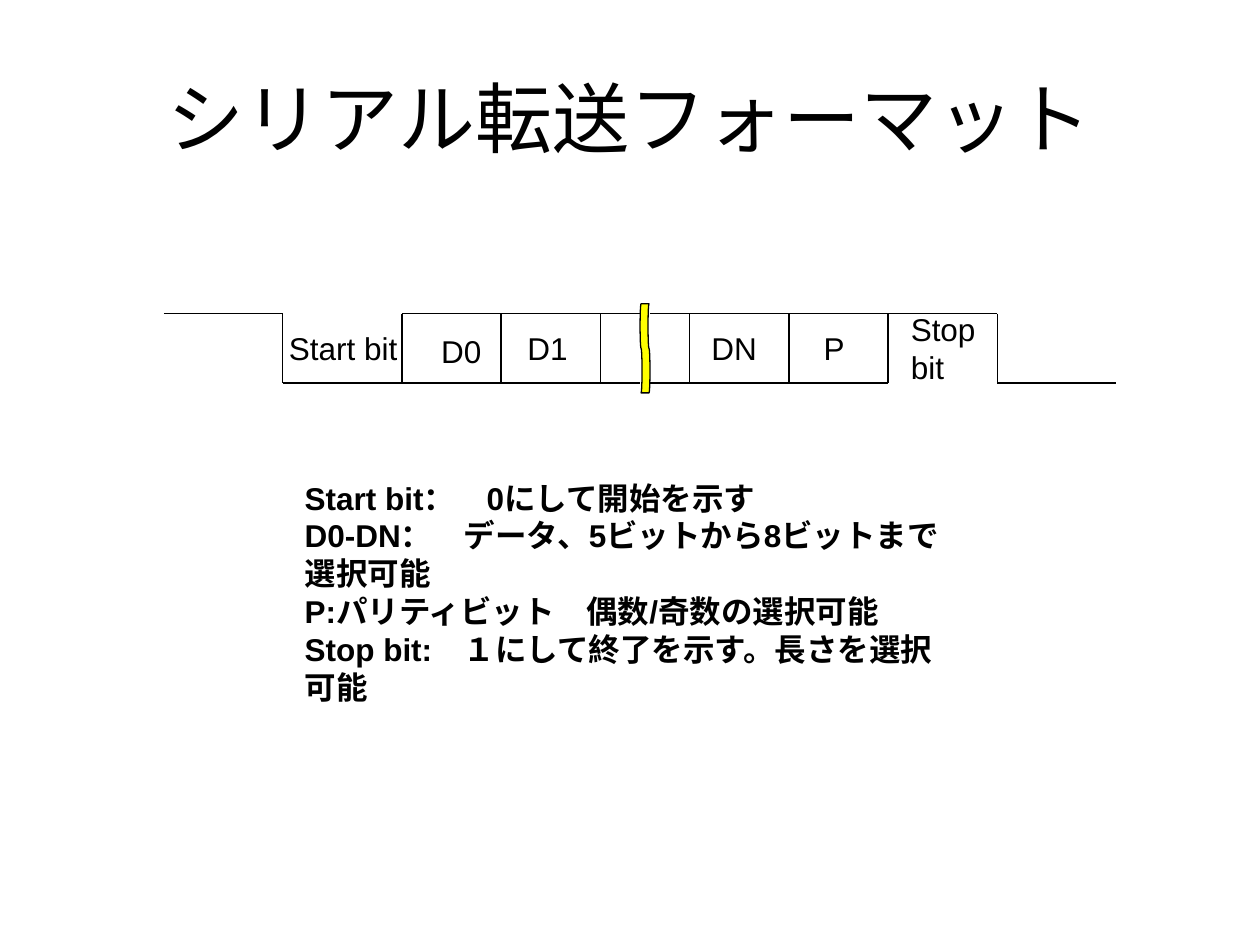
from lxml.etree import SubElement
from pptx import Presentation
from pptx.dml.color import RGBColor
from pptx.enum.shapes import MSO_CONNECTOR as Connector, MSO_SHAPE as Shape
from pptx.enum.text import MSO_ANCHOR as Anchor, MSO_AUTO_SIZE as AutoSize, PP_ALIGN as Align
from pptx.oxml.ns import qn
from pptx.util import Inches, Pt

COLORS = {"ink": "000000", "break": "FFFF00"}
FONT = "Arial"
LINE_WIDTH = Pt(0.75)

# The waveform lies on a grid of square cells
COLUMNS, ROWS = 96, 7
LEVELS = [  # start column, end column, row
    (0, 12, 0), (12, 24, ROWS), (24, 48, 0), (24, 48, ROWS),
    (49, 73, 0), (49, 73, ROWS), (72, 84, 0), (84, 96, ROWS),
]
EDGES = [12, 24, 34, 44, 53, 63, 73, 84]
BREAK_COLUMN = 48.5
LABELS = [  # text, centre column, centre row, width and height in inches
    ("Start bit", 18.1, 3.5, 1.06, 0.4),
    ("D0", 30, 3.8, 0.52, 0.4),
    ("D1", 38.7, 3.5, 0.52, 0.4),
    ("DN", 57.5, 3.5, 0.56, 0.4),
    ("P", 67.6, 3.5, 0.37, 0.4),
    ("Stop\nbit", 78.6, 3.5, 0.72, 0.7),
]
NOTES = "\n".join([
    "Start bit： 0にして開始を示す",
    "D0-DN： データ、5ビットから8ビットまで選択可能",
    "P:パリティビット 偶数/奇数の選択可能",
    "Stop bit: １にして終了を示す。長さを選択可能",
]).replace(" 0", "\u30000").replace("： ", "：\u3000").replace("ト ", "ト\u3000").replace(": ", ":\u3000")


def color(name):
    return RGBColor.from_string(COLORS[name])


def write_text(frame, text, size=18, bold=False, align=Align.LEFT, wrap=False,
               auto_size=AutoSize.SHAPE_TO_FIT_TEXT):
    frame.text = text
    frame.word_wrap = wrap
    frame.auto_size = auto_size
    for paragraph in frame.paragraphs:
        paragraph.alignment = align
        for run in paragraph.runs:
            run.font.name = FONT
            run.font.size = Pt(size)
            run.font.bold = bold
            run.font.color.rgb = color("ink")


def add_line(slide, start, end):
    line = slide.shapes.add_connector(Connector.STRAIGHT, *start, *end)
    line.line.color.rgb = color("ink")
    line.line.width = LINE_WIDTH
    SubElement(line._element.spPr, qn("a:effectLst"))


def add_title(slide, left, top, width, height):
    title = slide.shapes.title
    title.left, title.top, title.width, title.height = left, top, width, height
    title.text_frame.vertical_anchor = Anchor.MIDDLE
    write_text(title.text_frame, "シリアル転送フォーマット", size=44,
               align=Align.CENTER, wrap=True, auto_size=AutoSize.NONE)


def add_waveform(slide, left, top, width, height):
    def point(column, row):
        return int(left + width * column / COLUMNS), int(top + height * row / ROWS)

    # Signal levels and bit edges
    for start, end, row in LEVELS:
        add_line(slide, point(start, row), point(end, row))
    for column in EDGES:
        add_line(slide, point(column, 0), point(column, ROWS))

    # Break mark, turned upright around its centre
    x, y = point(BREAK_COLUMN, ROWS / 2)
    length, thickness = int(height * (ROWS + 2) / ROWS), int(width / COLUMNS)
    mark = slide.shapes.add_shape(Shape.FLOWCHART_PUNCHED_TAPE, x - length // 2,
                                  y - thickness // 2, length, thickness)
    mark.rotation = 90
    mark.shadow.inherit = False
    mark.fill.solid()
    mark.fill.fore_color.rgb = color("break")
    mark.line.color.rgb = color("ink")
    mark.line.width = LINE_WIDTH

    # Bit names
    for text, column, row, label_width, label_height in LABELS:
        x, y = point(column, row)
        w, h = Inches(label_width), Inches(label_height)
        label = slide.shapes.add_textbox(x - w // 2, y - h // 2, w, h)
        write_text(label.text_frame, text)


def add_notes_text(slide, left, top, width, height):
    box = slide.shapes.add_textbox(left, top, width, height)
    write_text(box.text_frame, NOTES, bold=True, wrap=True)


def main():
    presentation = Presentation()
    presentation.slide_width, presentation.slide_height = Inches(10), Inches(7.5)
    slide = presentation.slides.add_slide(presentation.slide_layouts[5])

    add_title(slide, Inches(0.5), Inches(0.3), Inches(9), Inches(1.25))
    add_waveform(slide, Inches(1.3), Inches(2.49), Inches(7.56), Inches(0.55))
    add_notes_text(slide, Inches(2.32), Inches(3.75), Inches(5.4), Inches(1.3))

    presentation.save("out.pptx")


if __name__ == "__main__":
    main()
